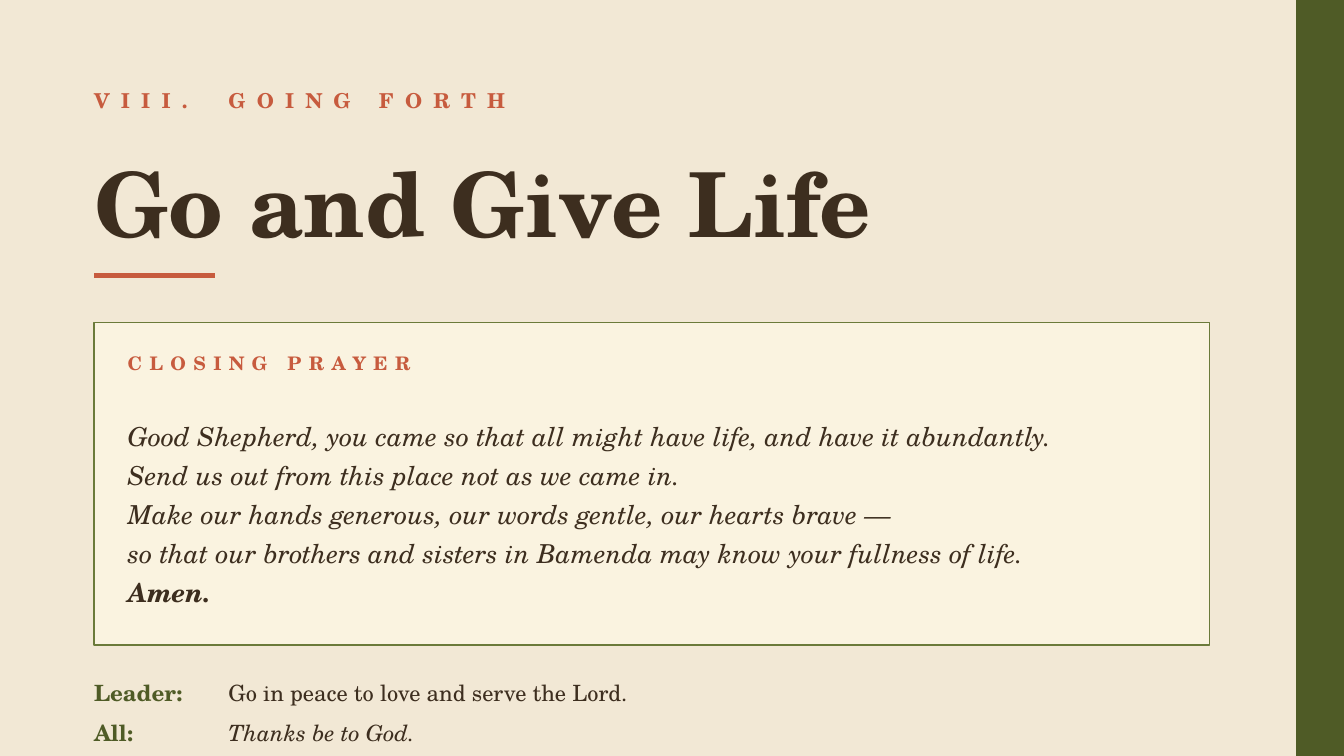
from dataclasses import dataclass

from lxml.etree import SubElement
from pptx import Presentation
from pptx.dml.color import RGBColor
from pptx.enum.shapes import MSO_CONNECTOR as Connector, MSO_SHAPE as Shape
from pptx.enum.text import MSO_ANCHOR as Anchor, MSO_AUTO_SIZE as AutoSize, PP_ALIGN as Align
from pptx.oxml.ns import qn
from pptx.util import Inches, Pt

SECTION = "VIII.\tGOING FORTH"
TITLE = "Go and Give Life"
PRAYER_LABEL = "CLOSING PRAYER"
PRAYER = [
    "Good Shepherd, you came so that all might have life, and have it abundantly.",
    "Send us out from this place not as we came in.",
    "Make our hands generous, our words gentle, our hearts brave —",
    "so that our brothers and sisters in Bamenda may know your fullness of life.",
]
AMEN = "Amen."
DISMISSAL = [
    ("Leader:", "Go in peace to love and serve the Lord.", False),
    ("All:", "Thanks be to God.", True),
]


@dataclass(frozen=True)
class Theme:
    font: str = "TeX Gyre Schola"
    paper: str = "F2E8D5"
    panel: str = "FAF3E0"
    ink: str = "3D2E1F"
    accent: str = "C75B3E"
    green: str = "4F5B26"
    border: str = "6B7A3A"
    title: int = 48
    prayer: int = 14
    response: int = 12
    section: int = 11
    label: int = 10


THEME = Theme()
WIDTH = 10
HEIGHT = WIDTH * 9 / 16
BAND = 0.35
LEFT, CONTENT = 0.7, 8.3
INSET = 0.25
ROW = 0.3
SPEAKER = 1
PANEL_TOP, PANEL_HEIGHT = 2.4, 2.4
DISMISSAL_TOP = 5


def rgb(value):
    return RGBColor.from_string(value)


def write(slide, text, at, *, size, color=THEME.ink, bold=False, italic=False,
          spacing=0, after=0, tab=None, holder=None):
    area = [Inches(length) for length in at]
    box = holder or slide.shapes.add_textbox(*area)
    box.left, box.top, box.width, box.height = area
    box.element.getparent().append(box.element)
    frame = box.text_frame
    frame.word_wrap = True
    frame.auto_size = AutoSize.NONE
    frame.vertical_anchor = Anchor.MIDDLE
    frame.margin_left = frame.margin_right = frame.margin_top = frame.margin_bottom = 0
    lines = [text] if isinstance(text, str) else text
    frame.text = "\n".join(lines)
    for paragraph in frame.paragraphs:
        paragraph.alignment = Align.LEFT
        paragraph.space_before = Pt(0)
        paragraph.space_after = Pt(after)
        properties = paragraph._p.get_or_add_pPr()
        properties.set("marL", "0")
        properties.set("indent", "0")
        SubElement(properties, qn("a:buNone"))
        if tab:
            stops = SubElement(properties, qn("a:tabLst"))
            SubElement(stops, qn("a:tab"), pos=str(Inches(tab)), algn="l")
        for run in paragraph.runs:
            font = run.font
            font.name, font.size = THEME.font, Pt(size)
            font.bold, font.italic = bold, italic
            font.color.rgb = rgb(color)
            if spacing:
                run._r.get_or_add_rPr().set("spc", str(spacing * 100))
    return frame


def block(slide, at, fill, line, weight):
    shape = slide.shapes.add_shape(Shape.RECTANGLE, *[Inches(length) for length in at])
    shape.shadow.inherit = False
    shape.fill.solid()
    shape.fill.fore_color.rgb = rgb(fill)
    shape.line.color.rgb = rgb(line)
    shape.line.width = Pt(weight)


def underline(slide, left, top, width):
    rule = slide.shapes.add_connector(
        Connector.STRAIGHT, Inches(left), Inches(top), Inches(left + width), Inches(top))
    rule.line.color.rgb = rgb(THEME.accent)
    rule.line.width = Pt(2.5)
    SubElement(rule.element.spPr, qn("a:effectLst"))


def main():
    deck = Presentation()
    deck.slide_width, deck.slide_height = Inches(WIDTH), Inches(HEIGHT)
    slide = deck.slides.add_slide(deck.slide_layouts[1])
    title, body = slide.placeholders
    slide.background.fill.solid()
    slide.background.fill.fore_color.rgb = rgb(THEME.paper)

    block(slide, (WIDTH - BAND, 0, BAND, HEIGHT), THEME.green, THEME.green, 1)
    write(slide, SECTION, (LEFT, 0.6, 6, ROW), size=THEME.section,
          color=THEME.accent, bold=True, spacing=6, tab=1.07)
    write(slide, TITLE, (LEFT, 1, 8.5, 1), size=THEME.title, bold=True, holder=title)
    underline(slide, LEFT, 2.05, 0.9)

    block(slide, (LEFT, PANEL_TOP, CONTENT, PANEL_HEIGHT), THEME.panel, THEME.border, 0.75)
    write(slide, PRAYER_LABEL, (LEFT + INSET, PANEL_TOP + 0.15, 5, ROW),
          size=THEME.label, color=THEME.accent, bold=True, spacing=4)
    prayer = write(slide, [*PRAYER, AMEN], (LEFT + INSET, PANEL_TOP + 0.5, 7.9, 1.85),
                   size=THEME.prayer, italic=True, after=4, holder=body)
    prayer.paragraphs[-1].runs[0].font.bold = True

    for row, (speaker, words, italic) in enumerate(DISMISSAL):
        top = DISMISSAL_TOP + row * ROW
        write(slide, speaker, (LEFT, top, SPEAKER, ROW),
              size=THEME.response, color=THEME.green, bold=True)
        write(slide, words, (LEFT + SPEAKER, top, CONTENT - SPEAKER, ROW),
              size=THEME.response, italic=italic)

    deck.save("out.pptx")


if __name__ == "__main__":
    main()
